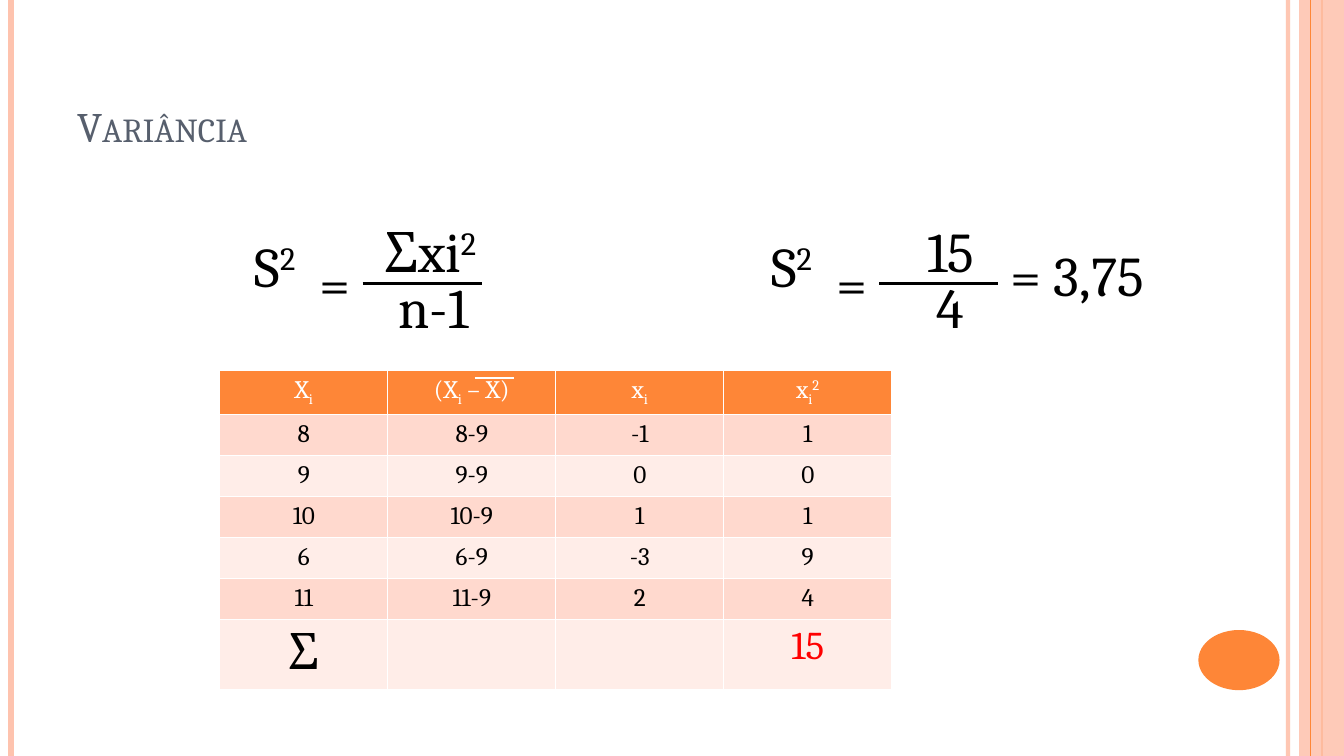
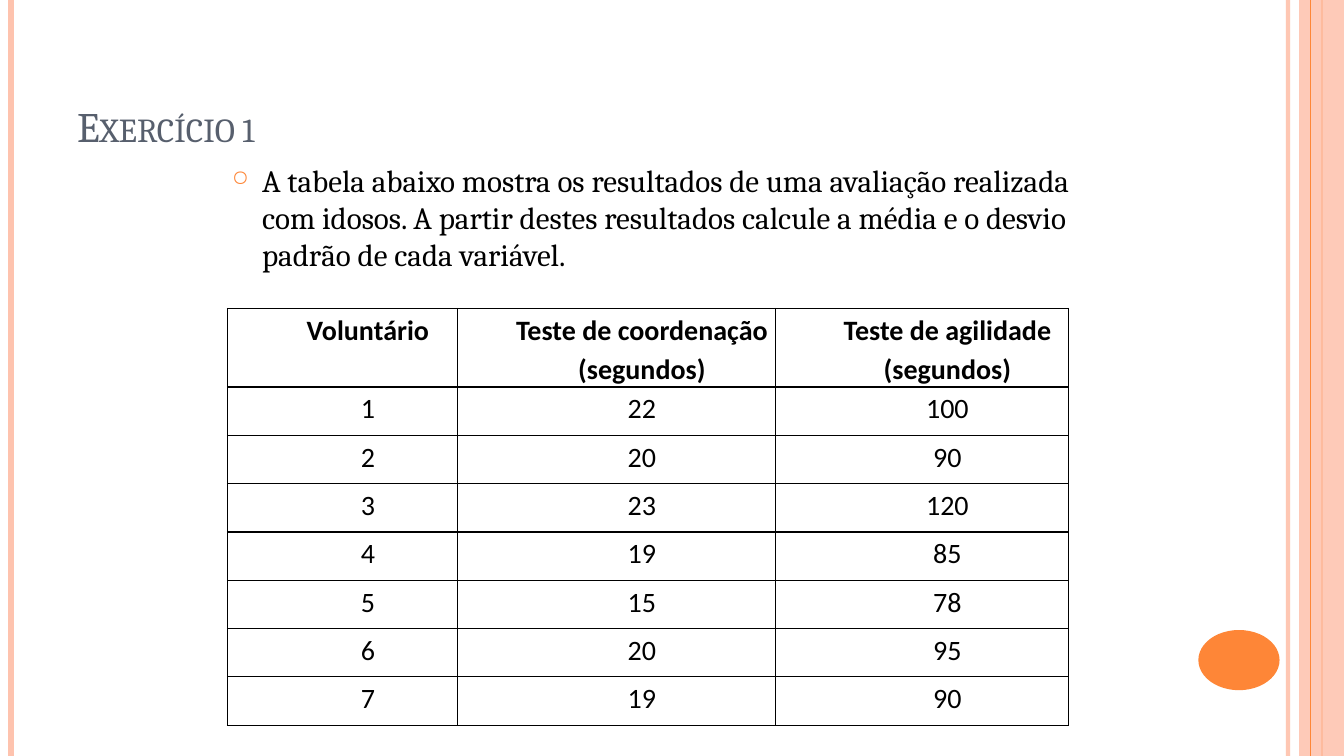
from lxml import etree
from pptx import Presentation
from pptx.dml.color import RGBColor
from pptx.enum import shapes, text
from pptx.oxml import ns
from pptx.util import Pt

COLORS = {
    "orange": "FE8637",
    "peach": "FEC3AE",
    "band_dark": "FFD9CE",
    "band_light": "FFEDE8",
    "slate": "575F6D",
    "black": "000000",
    "white": "FFFFFF",
    "red": "FF0000",
}
WIDTH, HEIGHT = 960, 540
SERIF, SANS = "Cambria", "Calibri"
HANGING = 21.6
CENTER = text.PP_ALIGN.CENTER


def rgb(name):
    return RGBColor.from_string(COLORS[name])


def child(parent, tag, **attributes):
    return etree.SubElement(parent, ns.qn(tag), attributes)


def set_opacity(parent, percent):
    color = next(parent.iter(ns.qn("a:srgbClr")))
    child(color, "a:alpha", val=str(percent * 1000))


def add_line(page, start, end, color, weight):
    line = page.shapes.add_connector(
        shapes.MSO_CONNECTOR.STRAIGHT, *[Pt(value) for value in (*start, *end)])
    line.line.color.rgb = rgb(color)
    line.line.width = Pt(weight)
    child(line._element.spPr, "a:effectLst")
    return line


def add_solid(page, kind, box, color):
    solid = page.shapes.add_shape(kind, *[Pt(value) for value in box])
    solid.shadow.inherit = False
    solid.fill.solid()
    solid.fill.fore_color.rgb = rgb(color)
    solid.line.fill.background()
    return solid


def write(para, content, size, font=SERIF, color="black", bold=False):
    para.font.size = Pt(size)
    para.font.name = font
    para.font.bold = bold
    para.font.color.rgb = rgb(color)
    spans = [(content, 0)] if isinstance(content, str) else content
    for words, shift in spans:
        span = para.add_run()
        span.text = words
        if shift:
            span._r.get_or_add_rPr().set("baseline", str(shift * 1000))


def indent(para, left, first):
    properties = para._p.get_or_add_pPr()
    properties.set("marL", str(Pt(left)))
    properties.set("indent", str(Pt(first)))
    return properties


def add_frame(page, box):
    frame = page.shapes.add_textbox(*[Pt(value) for value in box]).text_frame
    frame.word_wrap = True
    return frame


def add_page(deck, title):
    page = deck.slides.add_slide(deck.slide_layouts[6])

    def rule(x, color, weight):
        return add_line(page, (x, 0), (x, HEIGHT), color, weight)

    set_opacity(rule(920, "peach", 3)._element, 93)
    rule(8, "peach", 4.5)
    rule(944, "orange", 1.5)
    band = add_solid(page, shapes.MSO_SHAPE.RECTANGLE, (928, 0, 32, HEIGHT), "peach")
    set_opacity(band._element.spPr, 87)
    rule(936, "orange", 0.75)
    add_solid(page, shapes.MSO_SHAPE.OVAL, (856, 450, 58, 43), "orange")

    frame = add_frame(page, (48, 21.6, 784, 90))
    frame.vertical_anchor = text.MSO_ANCHOR.BOTTOM
    para = frame.paragraphs[0]
    write(para, title, 30, color="slate")
    para.runs[0]._r.get_or_add_rPr().set("cap", "small")
    return page


def add_term(page, box, content):
    para = add_frame(page, box).paragraphs[0]
    para.alignment = CENTER
    para.space_before = Pt(6)
    indent(para, HANGING, -HANGING)
    write(para, content, 40)


def add_fraction(page, left, top, numerator, denominator):
    add_term(page, (left, top + 10.8, 91, 63), [("S", 0), ("2", 30)])
    add_term(page, (left + 85, top, 148, 63), numerator)
    add_term(page, (left + 119.5, top + 39.6, 78.5, 63), denominator)
    add_line(page, (left + 108, top + 51), (left + 193, top + 51), "black", 2.25)
    add_term(page, (left + 57.5, top + 22.5, 62, 45), "=")


def set_borders(cell, color):
    properties = cell._tc.get_or_add_tcPr()
    for order, side in enumerate("LRTB"):
        edge = etree.Element(ns.qn("a:ln" + side), w=str(Pt(1)))
        child(child(edge, "a:solidFill"), "a:srgbClr", val=COLORS[color])
        properties.insert(order, edge)


def add_grid(page, left, top, columns, heights, border):
    size = len(heights), len(columns)
    table = page.shapes.add_table(
        *size, Pt(left), Pt(top), Pt(sum(columns)), Pt(sum(heights))).table
    table.first_row = table.horz_banding = False
    for column, width in zip(table.columns, columns):
        column.width = Pt(width)
    for row, height in zip(table.rows, heights):
        row.height = Pt(height)
    for cell in table.iter_cells():
        set_borders(cell, border)
    return table


def add_deviation_table(page, left, top):
    header = [
        [("X", 0), ("i", -25)],
        [("(X", 0), ("i", -25), (" – X)", 0)],
        [("x", 0), ("i", -25)],
        [("x", 0), ("i", -25), ("2", 30)],
    ]
    mean = 9
    rows = [header]
    for value in (8, 9, 10, 6, 11):
        gap = value - mean
        rows.append([str(value), f"{value}-{mean}", str(gap), str(gap ** 2)])
    rows.append(["Σ", "", "", "15"])
    table = add_grid(page, left, top, [120] * 4, [29.2] * 6 + [48.6], "white")
    total = len(rows) - 1
    special = {(total, 0): (36, "black"), (total, 3): (28, "red")}
    for r, row in enumerate(rows):
        fill = "band_dark" if r % 2 else "band_light"
        for c, content in enumerate(row):
            cell = table.cell(r, c)
            cell.fill.solid()
            cell.fill.fore_color.rgb = rgb(fill if r else "orange")
            para = cell.text_frame.paragraphs[0]
            para.alignment = CENTER
            size, color = special.get((r, c), (18, "black" if r else "white"))
            if content:
                write(para, content, size, color=color)
    add_line(page, (left + 182, top + 5.5), (left + 210, top + 5.5), "white", 1)


def add_results_table(page, left, top):
    rows = [
        ("Voluntário", "Teste de coordenação (segundos)", "Teste de agilidade\n(segundos)"),
        (1, 22, 100),
        (2, 20, 90),
        (3, 23, 120),
        (4, 19, 85),
        (5, 15, 78),
        (6, 20, 95),
        (7, 19, 90),
    ]
    table = add_grid(page, left, top, (164.5, 227, 209.5), [56.2] + [34.5] * 7, "black")
    for r, row in enumerate(rows):
        for c, content in enumerate(row):
            cell = table.cell(r, c)
            cell.fill.background()
            cell.margin_left = cell.margin_right = Pt(5)
            cell.margin_top = cell.margin_bottom = 0
            frame = cell.text_frame
            for number, words in enumerate(str(content).split("\n")):
                para = frame.add_paragraph() if number else frame.paragraphs[0]
                para.alignment = CENTER
                para.line_spacing = 1.15
                indent(para, 36, 0)
                write(para, words, 20, SANS, bold=r == 0)


def add_bullet(page, box, words):
    para = add_frame(page, box).paragraphs[0]
    para.space_before = Pt(6)
    properties = indent(para, HANGING, -HANGING)
    child(child(properties, "a:buClr"), "a:srgbClr", val=COLORS["orange"])
    child(properties, "a:buSzPct", val="70000")
    child(properties, "a:buChar", char="○")
    write(para, words, 22.2)


def build_variance(deck):
    page = add_page(deck, "Variância")
    add_fraction(page, 151, 151.2, [("Σxi", 0), ("2 ", 30)], "n-1")
    add_deviation_table(page, 157, 264.5)
    add_fraction(page, 520, 151.2, "15", "4")
    add_term(page, (702, 168, 135, 68), "= 3,75")


def build_exercise(deck):
    page = add_page(deck, "Exercício 1")
    add_bullet(page, (158.5, 111.6, 628, 87),
               "A tabela abaixo mostra os resultados de uma avaliação realizada com idosos. "
               "A partir destes resultados calcule a média e o desvio padrão de cada variável.")
    add_results_table(page, 162.5, 220.3)


def main():
    deck = Presentation()
    deck.slide_width, deck.slide_height = Pt(WIDTH), Pt(HEIGHT)
    build_variance(deck)
    build_exercise(deck)
    deck.save("out.pptx")


if __name__ == "__main__":
    main()
